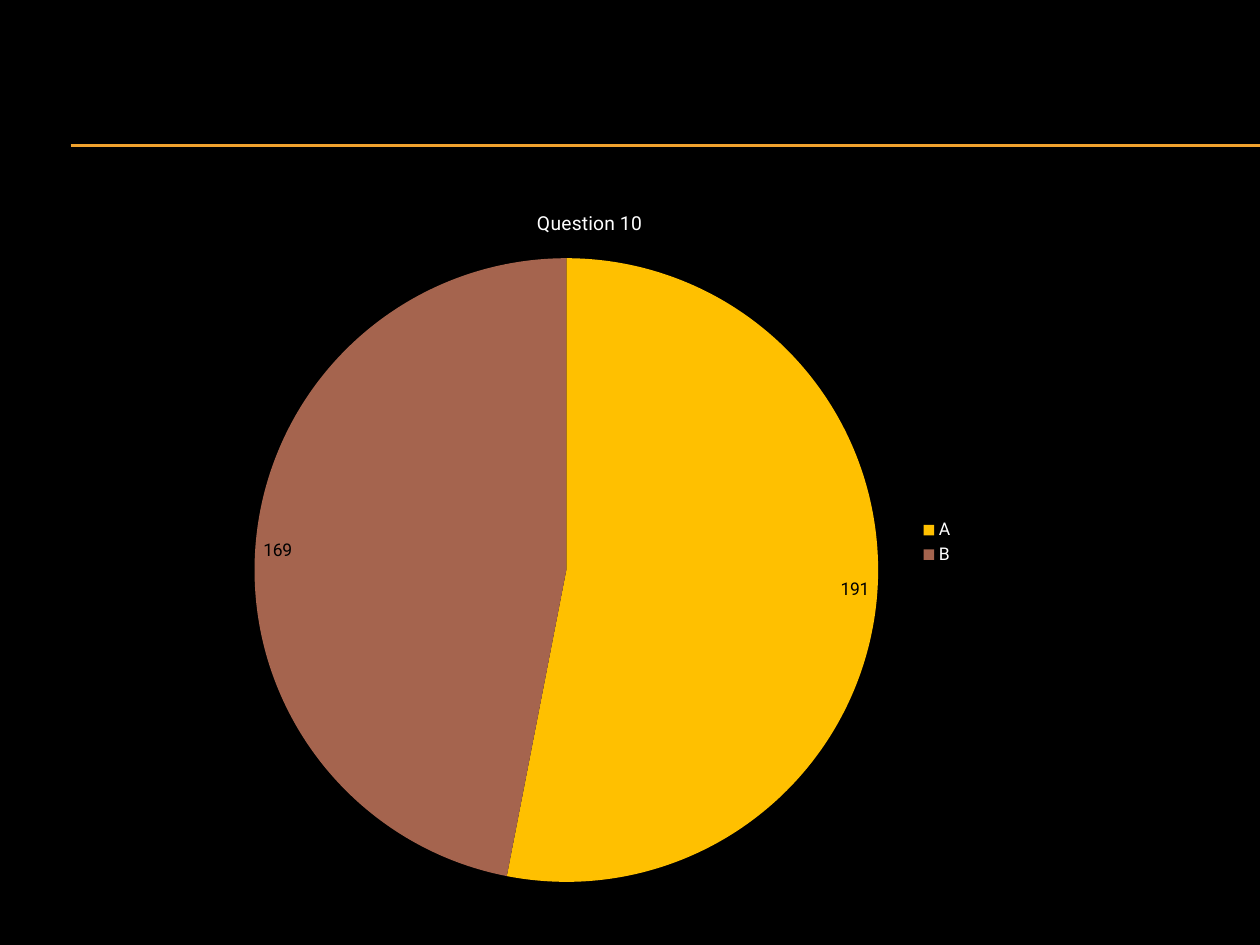
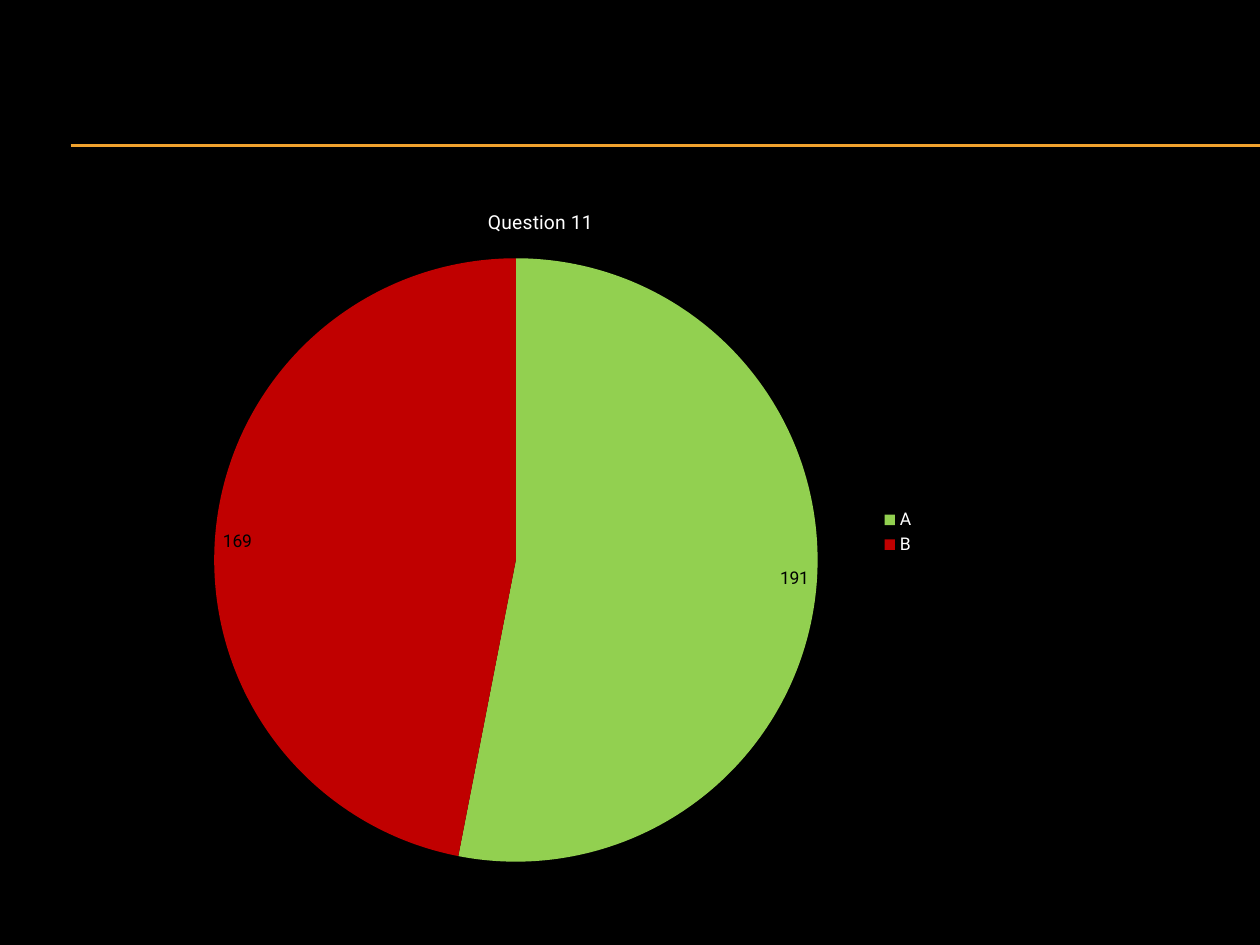
from dataclasses import dataclass

from lxml import etree
from pptx import Presentation
from pptx.chart.data import CategoryChartData
from pptx.dml.color import RGBColor
from pptx.enum.chart import XL_CHART_TYPE, XL_LABEL_POSITION, XL_LEGEND_POSITION
from pptx.enum.shapes import MSO_CONNECTOR
from pptx.oxml.ns import qn
from pptx.util import Inches, Pt

PIE = XL_CHART_TYPE.PIE
INSIDE_END = XL_LABEL_POSITION.INSIDE_END
LEGEND_RIGHT = XL_LEGEND_POSITION.RIGHT
STRAIGHT = MSO_CONNECTOR.STRAIGHT

BLACK = RGBColor(0x00, 0x00, 0x00)
WHITE = RGBColor(0xFF, 0xFF, 0xFF)
ORANGE = RGBColor(0xF0, 0xA2, 0x2E)
AMBER = RGBColor(0xFF, 0xC0, 0x00)
BROWN = RGBColor(0xA5, 0x64, 0x4E)
GREEN = RGBColor(0x92, 0xD0, 0x50)
RED = RGBColor(0xC0, 0x00, 0x00)

FONT = "Roboto"
PAGE_WIDTH, PAGE_HEIGHT = 10, 7.5
RULE_LEFT = 0.56
RULE_TOPS = (1.15, 1.16)
CHART_TOP = 1.47
PIE_TOP = 2.05
BLANK_LAYOUT = 6


@dataclass(frozen=True)
class Question:
    """Answers to one question; lengths are in inches."""

    title: str
    answers: dict[str, int]
    colors: tuple[RGBColor, ...]
    left: float
    width: float
    height: float
    pie_left: float
    pie_diameter: float


QUESTIONS = (
    Question("Question 10", {"A": 191, "B": 169}, (AMBER, BROWN),
             left=1.69, width=5.98, height=5.67, pie_left=2.02, pie_diameter=4.95),
    Question("Question 11", {"A": 191, "B": 169}, (GREEN, RED),
             left=1.22, width=6.14, height=5.51, pie_left=1.7, pie_diameter=4.79),
)


def style_font(font, size: float, color: RGBColor) -> None:
    font.name = FONT
    font.size = Pt(size)
    font.bold = False
    font.color.rgb = color


def add_page(deck):
    """Add a black page with the double orange rule."""
    page = deck.slides.add_slide(deck.slide_layouts[BLANK_LAYOUT])
    page.background.fill.solid()
    page.background.fill.fore_color.rgb = BLACK
    for top in RULE_TOPS:
        rule = page.shapes.add_connector(
            STRAIGHT, Inches(RULE_LEFT), Inches(top), Inches(PAGE_WIDTH), Inches(top))
        rule.line.color.rgb = ORANGE
        rule.line.width = Pt(0.75)
        etree.SubElement(rule._element.spPr, qn("a:effectLst"))
    return page


def place_pie(chart, question: Question) -> None:
    """Fix the pie's place as shares of the chart frame."""
    plot_area = chart._chartSpace.chart.plotArea
    layout = plot_area.find(qn("c:layout"))
    if layout is None:
        layout = etree.Element(qn("c:layout"))
        plot_area.insert(0, layout)
    manual = etree.SubElement(layout, qn("c:manualLayout"))
    settings = {
        "layoutTarget": "inner",
        "xMode": "edge",
        "yMode": "edge",
        "x": (question.pie_left - question.left) / question.width,
        "y": (PIE_TOP - CHART_TOP) / question.height,
        "w": question.pie_diameter / question.width,
        "h": question.pie_diameter / question.height,
    }
    for name, value in settings.items():
        etree.SubElement(manual, qn(f"c:{name}")).set("val", str(value))


def add_pie(page, question: Question) -> None:
    chart_data = CategoryChartData(number_format="0")
    chart_data.categories = list(question.answers)
    chart_data.add_series(question.title, list(question.answers.values()))
    chart = page.shapes.add_chart(
        PIE, Inches(question.left), Inches(CHART_TOP),
        Inches(question.width), Inches(question.height), chart_data).chart
    style_font(chart.font, 10, WHITE)

    chart.has_title = True
    chart.chart_title.include_in_layout = False
    title = chart.chart_title.text_frame
    title.text = question.title
    style_font(title.paragraphs[0].font, 11, WHITE)

    chart.has_legend = True
    chart.legend.position = LEGEND_RIGHT
    chart.legend.include_in_layout = False
    style_font(chart.legend.font, 10, WHITE)

    plot = chart.plots[0]
    plot.vary_by_categories = True
    for index, color in enumerate(question.colors):
        fill = plot.series[0].points[index].format.fill
        fill.solid()
        fill.fore_color.rgb = color

    plot.has_data_labels = True
    labels = plot.data_labels
    labels.show_value = True
    labels.show_percentage = False
    labels.number_format = "0"
    labels.number_format_is_linked = False
    labels.position = INSIDE_END
    style_font(labels.font, 10, BLACK)
    place_pie(chart, question)


def main() -> None:
    deck = Presentation()
    deck.slide_width = Inches(PAGE_WIDTH)
    deck.slide_height = Inches(PAGE_HEIGHT)
    for question in QUESTIONS:
        add_pie(add_page(deck), question)
    deck.save("out.pptx")


if __name__ == "__main__":
    main()
